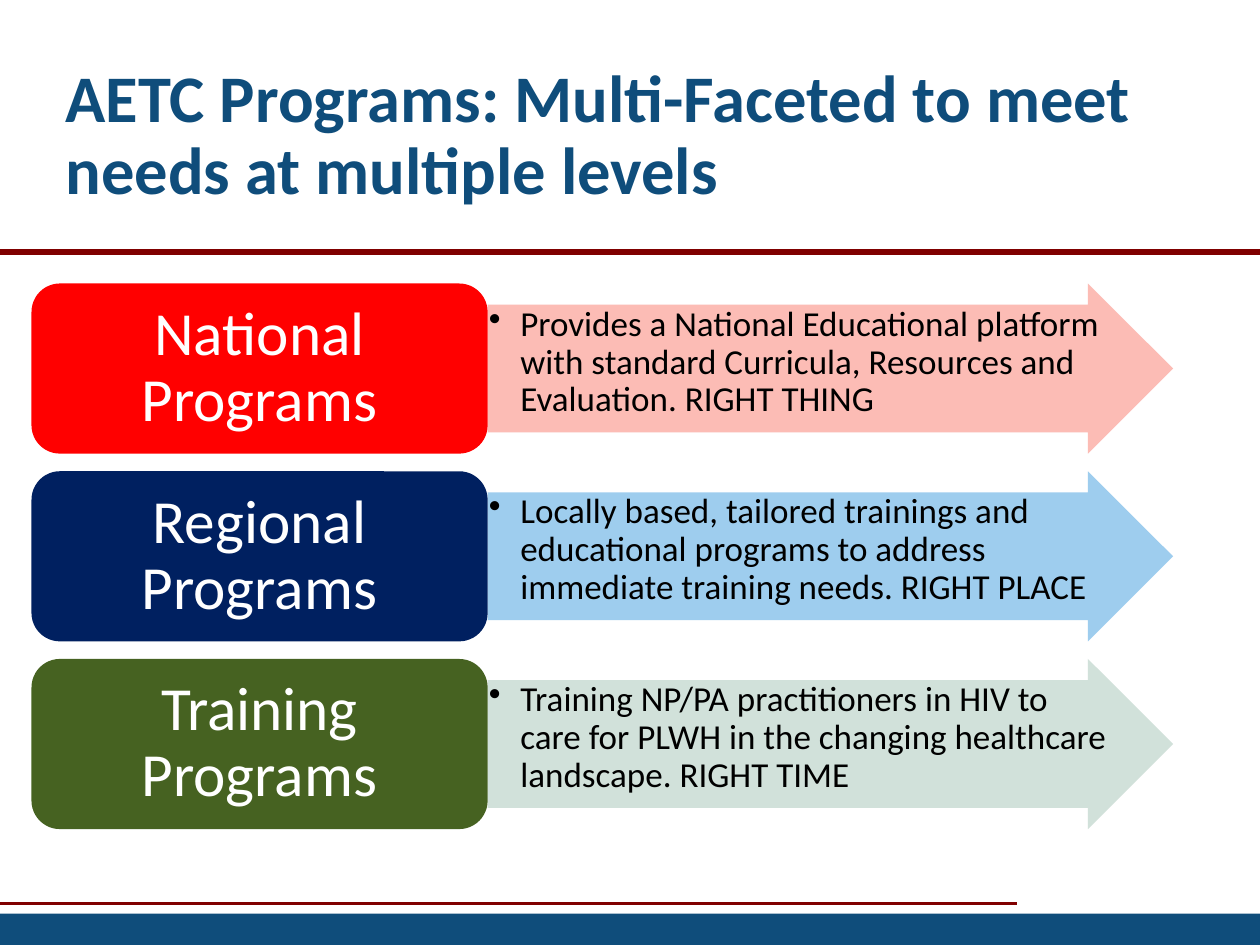
from lxml import etree
from pptx import Presentation
from pptx.dml.color import RGBColor
from pptx.enum import shapes, text
from pptx.oxml import ns
from pptx.util import Inches, Pt

THEME = {
    "font": "Calibri",
    "blue": "0F4D7B",
    "maroon": "800000",
    "white": "FFFFFF",
    "black": "000000",
    "title_size": 38,
    "program_size": 35,
    "detail_size": 20,
}

PROGRAMS = [
    ("National Programs", "FF0000", "FCB5AE",
     "Provides a National Educational platform with standard Curricula, "
     "Resources and Evaluation. RIGHT THING"),
    ("Regional Programs", "002060", "94C8ED",
     "Locally based, tailored trainings and educational programs to address "
     "immediate training needs. RIGHT PLACE"),
    ("Training Programs", "466221", "CDDED6",
     "Training NP/PA practitioners in HIV to care for PLWH in the changing "
     "healthcare landscape. RIGHT TIME"),
]


def add_block(preset, left, top, width, height, color):
    block = slide.shapes.add_shape(
        preset, Inches(left), Inches(top), Inches(width), Inches(height))
    block.shadow.inherit = False
    block.fill.solid()
    block.fill.fore_color.rgb = RGBColor.from_string(color)
    block.line.fill.background()
    return block


def write(holder, words, size, color, align, anchor, margins, bold=False):
    frame = holder.text_frame
    side, edge = (Inches(margin) for margin in margins)
    frame_format = {
        "word_wrap": True, "auto_size": text.MSO_AUTO_SIZE.NONE,
        "vertical_anchor": anchor, "margin_left": side, "margin_right": side,
        "margin_top": edge, "margin_bottom": edge,
    }
    for name, value in frame_format.items():
        setattr(frame, name, value)
    frame.text = words
    paragraph = frame.paragraphs[0]
    paragraph.alignment = align
    paragraph.line_spacing = 0.9
    paragraph.space_before = Pt(0)
    font = paragraph.runs[0].font
    for name, value in {"name": THEME["font"], "size": Pt(size), "bold": bold}.items():
        setattr(font, name, value)
    font.color.rgb = RGBColor.from_string(color)
    return paragraph


prs = Presentation()
prs.slide_width, prs.slide_height = Inches(10), Inches(7.5)
slide = prs.slides.add_slide(prs.slide_layouts[5])

title = slide.shapes.title
title_place = {"left": 0.42, "top": 0.33, "width": 8.9, "height": 1.52}
for name, value in title_place.items():
    setattr(title, name, Inches(value))
write(title, "AETC Programs: Multi-Faceted to meet needs at multiple levels",
      THEME["title_size"], THEME["blue"], text.PP_ALIGN.LEFT,
      text.MSO_ANCHOR.MIDDLE, (0.1, 0.05), bold=True)

for start, end, height, weight in [(-0.01, 8.07, 7.17, 1.5), (0, 10, 2, 3)]:
    rule = slide.shapes.add_connector(
        shapes.MSO_CONNECTOR.STRAIGHT,
        Inches(start), Inches(height), Inches(end), Inches(height))
    rule.line.color.rgb = RGBColor.from_string(THEME["maroon"])
    rule.line.width = Pt(weight)
    etree.SubElement(rule._element.spPr, ns.qn("a:effectLst"))

add_block(shapes.MSO_SHAPE.RECTANGLE, 0, 7.25, 10, 0.25, THEME["blue"])

for row, (program, program_color, arrow_color, detail) in enumerate(PROGRAMS):
    top = 2.25 + row * 1.49

    arrow = add_block(shapes.MSO_SHAPE.RIGHT_ARROW, 3.87, top, 5.44, 1.35, arrow_color)
    arrow.adjustments[0] = 0.75
    arrow.adjustments[1] = 0.5
    tint = arrow._element.spPr.find(ns.qn("a:solidFill"))[0]
    etree.SubElement(tint, ns.qn("a:alpha"), val="90000")
    bullet_line = write(arrow, detail, THEME["detail_size"], THEME["black"],
                        text.PP_ALIGN.LEFT, text.MSO_ANCHOR.TOP, (0.01, 0.01))
    properties = bullet_line._p.get_or_add_pPr()
    properties.set("marL", str(Inches(0.25)))
    properties.set("indent", str(Inches(-0.25)))
    etree.SubElement(properties, ns.qn("a:buChar"), char="•")

    label = add_block(shapes.MSO_SHAPE.ROUNDED_RECTANGLE, 0.25, top, 3.62, 1.35, program_color)
    write(label, program, THEME["program_size"], THEME["white"],
          text.PP_ALIGN.CENTER, text.MSO_ANCHOR.MIDDLE, (0.15, 0.07))

prs.save("out.pptx")
